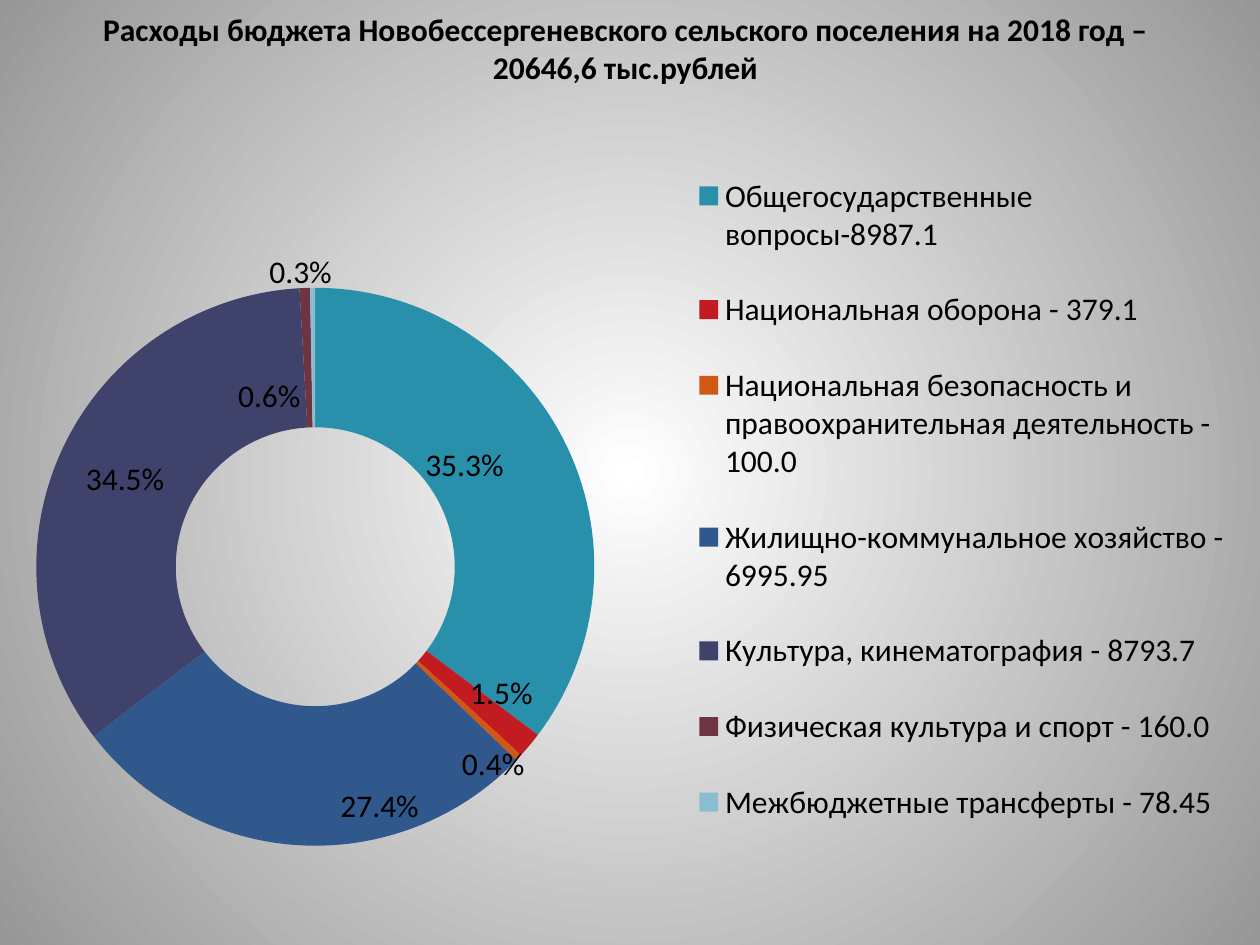
"""Build the slide with the settlement's 2018 budget expenses."""
import pptx
import pptx.chart.data
import pptx.dml.color
import pptx.enum.chart
import pptx.enum.text
import pptx.oxml
import pptx.oxml.ns
import pptx.util
from pptx.util import Cm

RGBColor = pptx.dml.color.RGBColor
BLACK = RGBColor(0x00, 0x00, 0x00)
WHITE = RGBColor(0xFF, 0xFF, 0xFF)
GRAY = RGBColor(0x97, 0x97, 0x97)
TEAL = RGBColor(0x28, 0x90, 0xAB)
RED = RGBColor(0xC2, 0x1B, 0x22)
ORANGE = RGBColor(0xD1, 0x57, 0x16)
BLUE = RGBColor(0x31, 0x58, 0x8C)
INDIGO = RGBColor(0x3F, 0x42, 0x6B)
MAROON = RGBColor(0x6F, 0x34, 0x41)
LIGHT_BLUE = RGBColor(0x8B, 0xBD, 0xD1)

EXPENSES = [
    ("Общегосударственные вопросы-8987.1", 0.353, TEAL, (-0.03, -0.01)),
    ("Национальная оборона - 379.1", 0.015, RED, (0.02, -0.01)),
    ("Национальная безопасность и правоохранительная деятельность - 100.0",
     0.004, ORANGE, (0.02, 0.07)),
    ("Жилищно-коммунальное хозяйство - 6995.95", 0.274, BLUE, (0.06, 0.04)),
    ("Культура, кинематография - 8793.7", 0.345, INDIGO, (0, 0)),
    ("Физическая культура и спорт - 160.0", 0.006, MAROON, (-0.03, 0.05)),
    ("Межбюджетные трансферты - 78.45", 0.003, LIGHT_BLUE, (-0.01, -0.11)),
]


class SlideBuilder:
    """Hold the style and the current slide."""

    font_name = "Calibri"
    font_size = pptx.util.Pt(18)
    percent_format = "0.0%"

    def __init__(self, presentation):
        self.slide = presentation.slides.add_slide(presentation.slide_layouts[6])

    def style_font(self, font, bold=False):
        font.name = self.font_name
        font.size = self.font_size
        font.bold = bold
        font.color.rgb = BLACK

    def radial_background(self, center, edge):
        fill = self.slide.background.fill
        fill.gradient()
        for stop, color, position in zip(fill.gradient_stops, (center, edge), (0, 1)):
            stop.color.rgb = color
            stop.position = position
        linear = self.slide.element.xpath(".//p:bg//a:lin")[0]
        circle = pptx.oxml.parse_xml(
            f'<a:path {pptx.oxml.ns.nsdecls("a")} path="circle">'
            '<a:fillToRect l="50000" t="50000" r="50000" b="50000"/></a:path>')
        linear.getparent().replace(linear, circle)

    def title(self, text, left, top, width, height):
        shape = self.slide.shapes.add_textbox(left, top, width, height)
        frame = shape.text_frame
        frame.word_wrap = True
        frame.vertical_anchor = pptx.enum.text.MSO_ANCHOR.MIDDLE
        paragraph = frame.paragraphs[0]
        paragraph.alignment = pptx.enum.text.PP_ALIGN.CENTER
        run = paragraph.add_run()
        run.text = text
        self.style_font(run.font, bold=True)

    def layout(self, **values):
        items = "".join(f'<c:{name} val="{value}"/>' for name, value in values.items())
        return pptx.oxml.parse_xml(
            f'<c:layout {pptx.oxml.ns.nsdecls("c")}>'
            f'<c:manualLayout>{items}</c:manualLayout></c:layout>')

    def place(self, element, x, y, w, h, **target):
        for old in element.xpath("./c:layout"):
            element.remove(old)
        return self.layout(**target, xMode="edge", yMode="edge", x=x, y=y, w=w, h=h)

    def doughnut(self, expenses, left, top, width, height):
        data = pptx.chart.data.CategoryChartData(number_format=self.percent_format)
        data.categories = [name for name, *_ in expenses]
        data.add_series("Series 1", [share for _, share, *_ in expenses])
        chart = self.slide.shapes.add_chart(
            pptx.enum.chart.XL_CHART_TYPE.DOUGHNUT, left, top, width, height, data).chart
        self.style_font(chart.font)
        chart.has_title = False
        chart.has_legend = True
        chart.legend.position = pptx.enum.chart.XL_LEGEND_POSITION.RIGHT
        chart.legend.include_in_layout = False
        self.style_font(chart.legend.font)

        space = chart.element
        plot_area = space.xpath(".//c:plotArea")[0]
        plot_area.insert(0, self.place(plot_area, 0.036, 0.222, 0.48, 0.721,
                                       layoutTarget="inner"))
        legend = space.xpath(".//c:legend")[0]
        layout = self.place(legend, 0.57, 0.03, 0.43, 0.93)
        legend.xpath("./c:legendPos")[0].addnext(layout)

        plot = chart.plots[0]
        plot.vary_by_categories = True
        space.xpath(".//c:holeSize")[0].set("val", "50")
        series = plot.series[0]
        labels = series.data_labels
        labels.show_value = True
        labels.show_percentage = False
        labels.number_format = self.percent_format
        labels.number_format_is_linked = False
        self.style_font(labels.font)
        for index, (_, _, color, (x, y)) in enumerate(expenses):
            point = series.points[index]
            point.format.fill.solid()
            point.format.fill.fore_color.rgb = color
            self.style_font(point.data_label.font)
            label = space.xpath(f".//c:dLbl[c:idx/@val={index}]")[0]
            number_format = pptx.oxml.parse_xml(
                f'<c:numFmt {pptx.oxml.ns.nsdecls("c")} '
                f'formatCode="{self.percent_format}" sourceLinked="0"/>')
            label.insert(1, self.layout(x=x, y=y))
            label.insert(2, number_format)


def main():
    presentation = pptx.Presentation()
    presentation.slide_width = Cm(25.4)
    presentation.slide_height = Cm(19.05)
    builder = SlideBuilder(presentation)
    builder.radial_background(WHITE, GRAY)
    builder.title("Расходы бюджета Новобессергеневского сельского поселения "
                  "на 2018 год – 20646,6 тыс.рублей",
                  Cm(1.09), Cm(0), Cm(23.04), Cm(1.93))
    builder.doughnut(EXPENSES, Cm(-0.71), Cm(2.34), Cm(25.6), Cm(15.6))
    presentation.save("out.pptx")


if __name__ == "__main__":
    main()
